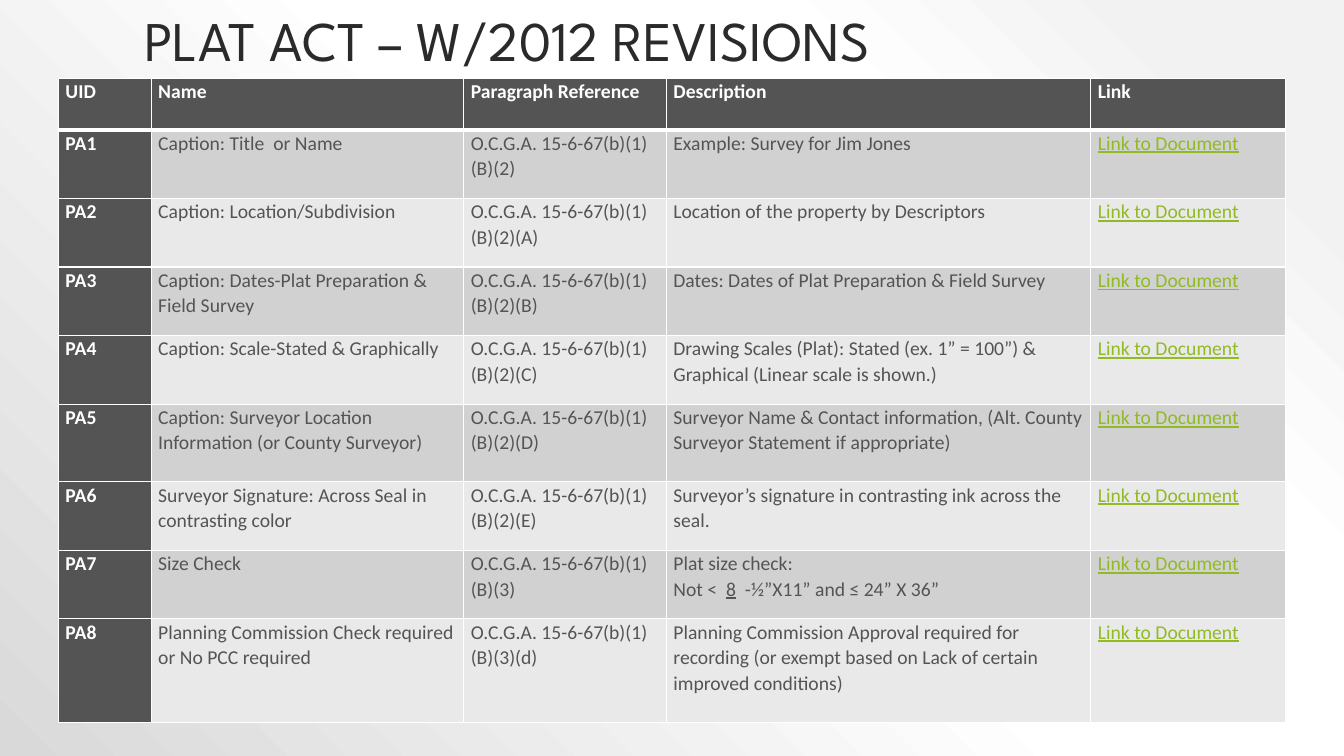
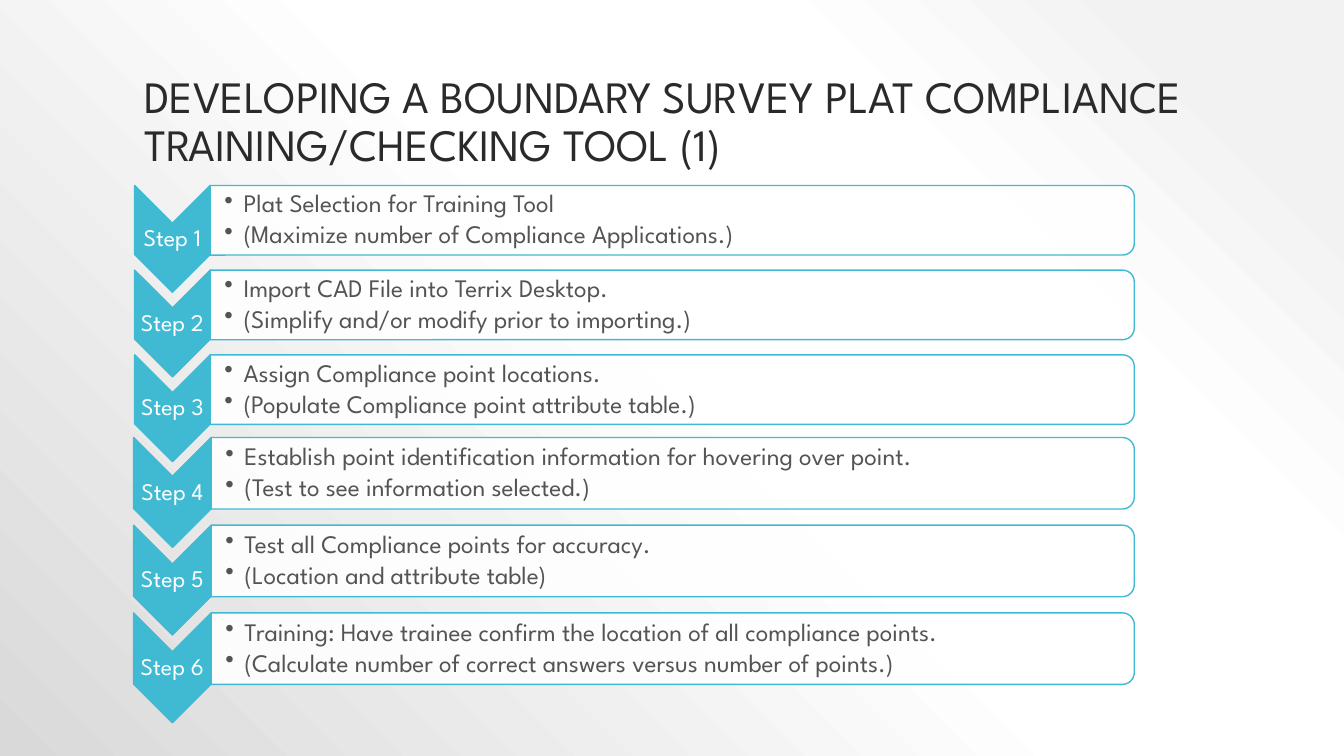
from dataclasses import dataclass

from lxml import etree
from pptx import Presentation
from pptx.dml.color import RGBColor
from pptx.enum import shapes, text
from pptx.oxml import parse_xml
from pptx.oxml.ns import nsdecls, qn
from pptx.util import Inches, Pt


@dataclass(frozen=True)
class Theme:
    title_font: str = "League Spartan"
    table_font: str = "Calibri"
    title: str = "2A2A2A"
    dark: str = "545454"
    white: str = "FFFFFF"
    accent: str = "40BAD2"
    link: str = "90BB23"
    bands: tuple = ("D1D1D1", "E9E9E9")
    backdrop: tuple = ((10, "F2F2F2"), (28, "FFFFFF"), (48, "FFFFFF"), (100, "D9D9D9"))
    table_size: int = 14
    label_size: int = 17
    list_size: int = 18


THEME = Theme()


def add_run(paragraph, words, font, size, colour, bold=False, underline=False):
    run = paragraph.add_run()
    run.text = words
    run.font.name = font
    run.font.size = Pt(size)
    run.font.color.rgb = RGBColor.from_string(colour)
    run.font.bold = bold
    run.font.underline = underline


def add_titled_slide(words, size, top, height):
    slide = presentation.slides.add_slide(presentation.slide_layouts[5])
    title = slide.shapes.title
    title.left, title.top = Inches(1.33), Inches(top)
    title.width, title.height = Inches(10.67), Inches(height)
    frame = title.text_frame
    frame.word_wrap = True
    frame.auto_size = text.MSO_AUTO_SIZE.NONE
    frame.vertical_anchor = text.MSO_ANCHOR.BOTTOM
    paragraph = frame.paragraphs[0]
    paragraph.alignment = text.PP_ALIGN.LEFT
    paragraph.line_spacing = 0.9
    add_run(paragraph, words, THEME.title_font, size, THEME.title)
    return slide


presentation = Presentation()
presentation.slide_width, presentation.slide_height = Inches(13.33), Inches(7.5)

# Shared background: a radial gradient centred on the top right corner
master = presentation.slide_master
master.background.fill.solid()
background = master.element.find(".//" + qn("p:bgPr"))
stops = "".join(
    f'<a:gs pos="{position * 1000}"><a:srgbClr val="{colour}"/></a:gs>'
    for position, colour in THEME.backdrop
)
background.replace(background.find(qn("a:solidFill")), parse_xml(
    f'<a:gradFill {nsdecls("a")} rotWithShape="1"><a:gsLst>{stops}</a:gsLst>'
    '<a:path path="circle"><a:fillToRect l="100000" b="100000"/></a:path></a:gradFill>'
))

# Slide 1: table of requirements
slide = add_titled_slide("PLAT ACT – W/2012 REVISIONS", 40, 0, 0.78)
HEADINGS = ["UID", "Name", "Paragraph Reference", "Description", "Link"]
COLUMN_WIDTHS = [0.92, 3.1, 2.01, 4.21, 1.93]
ROW_HEIGHTS = [0.51, 0.68, 0.68, 0.68, 0.68, 0.77, 0.68, 0.68, 1.03]
STATUTE = "O.C.G.A. 15-6-67(b)(1)(B)"
# Name, end of the reference, description as paragraphs of runs
REQUIREMENTS = [
    ("Caption: Title  or Name", "(2)", [["Example: Survey for Jim Jones"]]),
    ("Caption: Location/Subdivision", "(2)(A)", [["Location of the property by Descriptors"]]),
    ("Caption: Dates-Plat Preparation & Field Survey", "(2)(B)",
     [["Dates: Dates of Plat Preparation & Field Survey"]]),
    ("Caption: Scale-Stated & Graphically", "(2)(C)",
     [["Drawing Scales (Plat): Stated (ex. 1” = 100”) & Graphical (Linear scale is shown.)"]]),
    ("Caption: Surveyor Location Information (or County Surveyor)", "(2)(D)",
     [["Surveyor Name & Contact information, (Alt. County Surveyor Statement if appropriate)"]]),
    ("Surveyor Signature: Across Seal in contrasting color", "(2)(E)",
     [["Surveyor’s signature in contrasting ink across the seal."]]),
    ("Size Check", "(3)",
     [["Plat size check:"], ["Not <  ", "8", "  -½”X11” and ≤ 24” X 36”"]]),
    ("Planning Commission Check required or No PCC required", "(3)(d)",
     [["Planning Commission Approval required for recording "
       "(or exempt based on Lack of certain improved conditions)"]]),
]
rows = [[[[heading]] for heading in HEADINGS]]
for number, (name, clause, description) in enumerate(REQUIREMENTS, 1):
    rows.append([[[f"PA{number}"]], [[name]], [[STATUTE + clause]], description,
                 [["Link to Document"]]])

table = slide.shapes.add_table(
    len(rows), len(HEADINGS), Inches(0.58), Inches(0.78),
    Inches(sum(COLUMN_WIDTHS)), Inches(sum(ROW_HEIGHTS))).table
for column, width in zip(table.columns, COLUMN_WIDTHS):
    column.width = Inches(width)
for row, height in zip(table.rows, ROW_HEIGHTS):
    row.height = Inches(height)

for row_index, row in enumerate(rows):
    for column_index, paragraphs in enumerate(row):
        cell = table.cell(row_index, column_index)
        cell.margin_left = cell.margin_right = Inches(0.07)
        cell.margin_top = cell.margin_bottom = 0
        is_heading = row_index == 0 or column_index == 0
        is_link = row_index > 0 and column_index == len(HEADINGS) - 1
        colour = THEME.white if is_heading else THEME.link if is_link else THEME.dark

        for index, runs in enumerate(paragraphs):
            frame = cell.text_frame
            paragraph = frame.add_paragraph() if index else frame.paragraphs[0]
            paragraph.line_spacing = 1.07
            for words in runs:
                add_run(paragraph, words, THEME.table_font, THEME.table_size, colour,
                        is_heading, is_link or words == "8")

        properties = cell._tc.get_or_add_tcPr()
        for side in "LRTB":
            touches_header = (row_index, side) in ((0, "B"), (1, "T"))
            properties.append(parse_xml(
                f'<a:ln{side} {nsdecls("a")} w="{Pt(3 if touches_header else 1)}">'
                f'<a:solidFill><a:srgbClr val="{THEME.white}"/></a:solidFill></a:ln{side}>'
            ))
        cell.fill.solid()
        cell.fill.fore_color.rgb = RGBColor.from_string(
            THEME.dark if is_heading else THEME.bands[(row_index - 1) % 2])

# Slide 2: six steps in two blocks of three
slide = add_titled_slide(
    "DEVELOPING A BOUNDARY SURVEY PLAT COMPLIANCE TRAINING/CHECKING TOOL (1)", 32, 0.3, 1.45)
STEPS = [
    ("Plat Selection for Training Tool", "(Maximize number of Compliance Applications.)"),
    ("Import CAD File into Terrix Desktop.", "(Simplify and/or modify prior to importing.)"),
    ("Assign Compliance point locations.", "(Populate Compliance point attribute table.)"),
    ("Establish point identification information for hovering over point.",
     "(Test to see information selected.)"),
    ("Test all Compliance points for accuracy.", "(Location and attribute table)"),
    ("Training: Have trainee confirm the location of all compliance points.",
     "(Calculate number of correct answers versus number of points.)"),
]
# First top, pitch, chevron width, chevron height, panel height
BLOCKS = [(1.84, 0.84, 0.75, 1.06, 0.69), (4.34, 0.87, 0.77, 1.09, 0.71)]
CHEVRON_CENTRE = 1.71
PANEL_RIGHT = 11.25

for index, lines in enumerate(STEPS):
    block, place = divmod(index, 3)
    first_top, pitch, chevron_width, chevron_height, panel_height = BLOCKS[block]
    top = first_top + place * pitch
    chevron_left = CHEVRON_CENTRE - chevron_width / 2
    panel_left = CHEVRON_CENTRE + chevron_width / 2
    panel_width = PANEL_RIGHT - panel_left

    # Both outlines are turned a quarter, so their width and height swap about the centre
    for kind, fill, left, width, height in (
        (shapes.MSO_SHAPE.CHEVRON, THEME.accent, chevron_left, chevron_width, chevron_height),
        (shapes.MSO_SHAPE.ROUND_2_SAME_RECTANGLE, THEME.white,
         panel_left, panel_width, panel_height),
    ):
        shape = slide.shapes.add_shape(
            kind, Inches(left + (width - height) / 2), Inches(top + (height - width) / 2),
            Inches(height), Inches(width))
        shape.rotation = 90
        shape.shadow.inherit = False
        shape.fill.solid()
        shape.fill.fore_color.rgb = RGBColor.from_string(fill)
        shape.line.color.rgb = RGBColor.from_string(THEME.accent)
        shape.line.width = Pt(1)
    panel_colour = shape._element.spPr.find(qn("a:solidFill"))[0]
    etree.SubElement(panel_colour, qn("a:alpha")).set("val", "90000")

    for left, width, height, words, size, colour, bulleted in (
        (chevron_left, chevron_width, chevron_height, [f"Step {index + 1}"],
         THEME.label_size, THEME.white, False),
        (panel_left, panel_width, panel_height, lines, THEME.list_size, THEME.dark, True),
    ):
        box = slide.shapes.add_textbox(Inches(left), Inches(top), Inches(width), Inches(height))
        frame = box.text_frame
        frame.word_wrap = True
        frame.vertical_anchor = text.MSO_ANCHOR.MIDDLE
        frame.margin_left = Inches(0.14 if bulleted else 0.01)
        frame.margin_right = frame.margin_top = frame.margin_bottom = Inches(0.01)
        for line_index, line in enumerate(words):
            paragraph = frame.add_paragraph() if line_index else frame.paragraphs[0]
            paragraph.line_spacing = 0.9
            if bulleted:
                paragraph.space_after = Pt(2.7)
                properties = paragraph._p.get_or_add_pPr()
                properties.set("marL", str(Inches(0.19)))
                properties.set("indent", str(-Inches(0.19)))
                etree.SubElement(properties, qn("a:buChar")).set("char", "•")
            else:
                paragraph.alignment = text.PP_ALIGN.CENTER
            add_run(paragraph, line, THEME.title_font, size, colour)

presentation.save("out.pptx")
